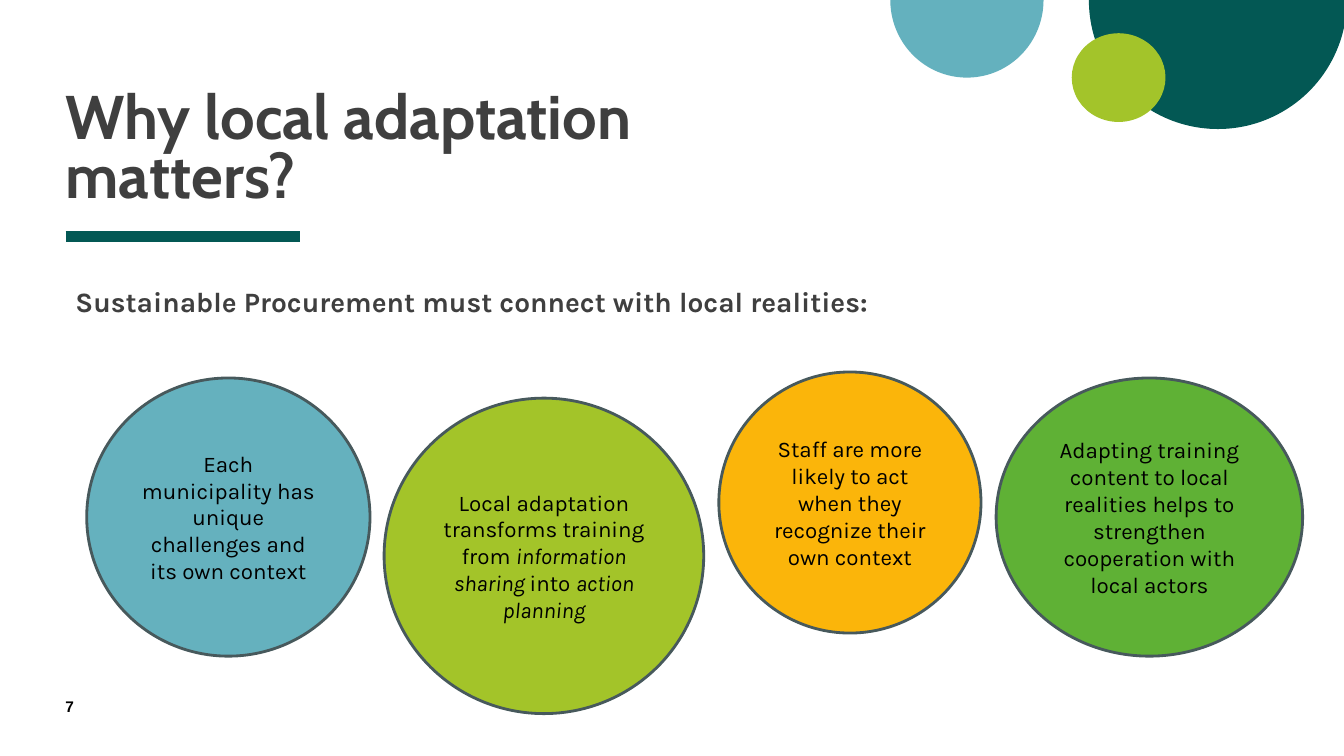
from pptx import Presentation
from pptx import util as u
from pptx.dml.color import RGBColor
from pptx.enum import shapes, text
from pptx.oxml.ns import qn
from lxml import etree

PX = 9144
HUES = {
    "pine": "035854", "sky": "64B1BE", "lime": "A3C42A", "ink": "3F3F3F",
    "black": "000000", "edge": "47595C", "blue": "65B1BE",
    "amber": "FBB50A", "olive": "A3C429", "green": "5FB135",
}
FORM = shapes.MSO_SHAPE
ANCHOR = text.MSO_ANCHOR
ALIGN = text.PP_ALIGN


class Deck:
    def __init__(self, wide, high):
        self.prs = Presentation()
        self.prs.slide_width, self.prs.slide_height = self.emu(wide, high)
        self.slide = self.prs.slides.add_slide(self.prs.slide_layouts[6])

    def emu(self, *sizes):
        return [u.Emu(size * PX) for size in sizes]

    def hue(self, name):
        return RGBColor.from_string(HUES[name])

    def words(self, frame, copy, size, font, color, bold=False,
              align=ALIGN.LEFT, anchor=ANCHOR.TOP, pad=(0, 0), lead=None):
        frame.word_wrap = True
        frame.vertical_anchor = anchor
        side, top = self.emu(*pad)
        frame.margin_left = frame.margin_right = side
        frame.margin_top = frame.margin_bottom = top
        para = frame.paragraphs[0]
        para.alignment = align
        para.line_spacing = lead
        for i, part in enumerate(copy.split("*")):
            if part:
                run = para.add_run()
                run.text = part
                run.font.size = u.Pt(size)
                run.font.name = font
                run.font.bold = bold
                run.font.italic = i % 2 == 1
                run.font.color.rgb = self.hue(color)

    def label(self, box, copy, size, font, color, **style):
        item = self.slide.shapes.add_textbox(*self.emu(*box))
        self.words(item.text_frame, copy, size, font, color, **style)

    def shape(self, form, box, fill, edge=None):
        item = self.slide.shapes.add_shape(form, *self.emu(*box))
        item.shadow.inherit = False
        item.fill.solid()
        item.fill.fore_color.rgb = self.hue(fill)
        if edge:
            item.line.color.rgb = self.hue(edge)
            item.line.width = u.Pt(2)
        else:
            item.line.fill.background()
        return item

    def half(self, box, fill):
        item = self.shape(FORM.PIE, box, fill)
        item.adjustments[0] = 0
        item.adjustments[1] = 108

    def rule(self, ends, color, width):
        item = self.slide.shapes.add_connector(
            shapes.MSO_CONNECTOR.STRAIGHT, *self.emu(*ends))
        item.line.color.rgb = self.hue(color)
        item.line.width = u.Pt(width)
        etree.SubElement(item._element.spPr, qn("a:effectLst"))

    def bubble(self, box, fill, copy):
        item = self.shape(FORM.FLOWCHART_CONNECTOR, box, fill, "edge")
        self.words(item.text_frame, copy, 16, "Karla", "black",
                   align=ALIGN.CENTER, anchor=ANCHOR.MIDDLE, pad=(10, 5))


def main():
    deck = Deck(1333, 750)
    deck.half((1080, -128, 256, 256), "pine")
    deck.rule((65, 235, 298, 235), "pine", 8)
    deck.half((883, -77, 152, 154), "sky")
    deck.shape(FORM.OVAL, (1063, 33, 93, 88), "lime")

    deck.label((65, 35, 742, 174), "Why local adaptation matters?",
               44, "Cabin", "ink", bold=True, anchor=ANCHOR.BOTTOM, lead=0.8)
    deck.label((65, 692, 57, 27), "7", 11, "Arial", "black", bold=True)
    deck.label((65, 277, 1203, 44),
               "Sustainable Procurement must connect with local realities:",
               20, "Karla", "ink", bold=True, pad=(10, 5))

    bubbles = [
        ((86, 375, 281, 276), "blue",
         "Each municipality has unique challenges and its own context"),
        ((713, 369, 260, 259), "amber",
         "Staff are more likely to act when they recognize their own context"),
        ((381, 395, 317, 313), "olive",
         "Local adaptation transforms training from "
         "*information sharing *into *action planning*"),
        ((988, 375, 304, 276), "green",
         "Adapting training content to local realities helps to "
         "strengthen cooperation with local actors"),
    ]
    for box, fill, copy in bubbles:
        deck.bubble(box, fill, copy)
    deck.prs.save("out.pptx")


if __name__ == "__main__":
    main()
